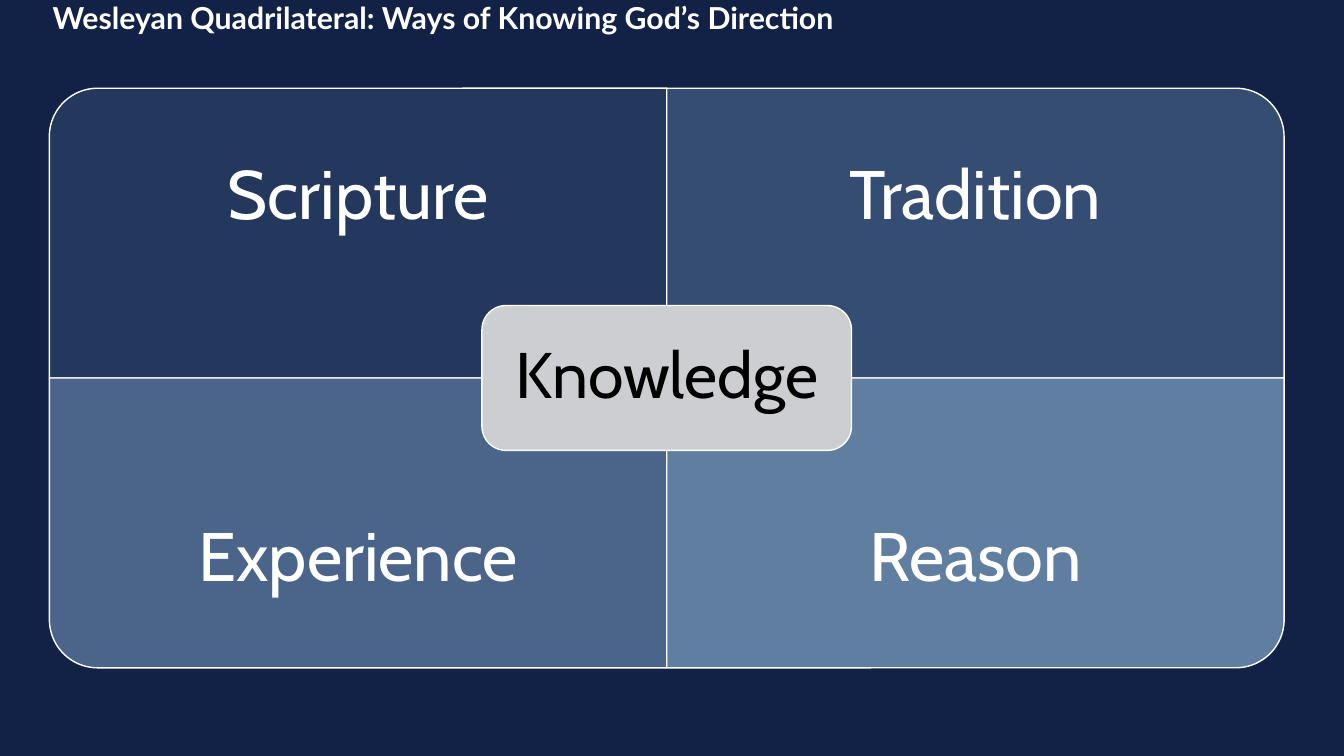
from pptx import Presentation
from pptx.dml.color import RGBColor
from pptx.enum.shapes import MSO_SHAPE
from pptx.enum.text import MSO_ANCHOR, MSO_AUTO_SIZE, PP_ALIGN
from pptx.util import Pt

SCALE = 9525
WIDE, HIGH = 588, 276
LEFT, TOP = 47, 84
LABEL = 207
PANELS = [
    ("Scripture", "24375C", 0, 0, 270),
    ("Tradition", "364D73", 1, 0, 0),
    ("Experience", "4A6589", 0, 1, 180),
    ("Reason", "5F7EA0", 1, 1, 90),
]


def px(n):
    return round(n * SCALE)


def color(code):
    return RGBColor.from_string(code)


class Board:
    white = "FFFFFF"
    face = "Cabin"

    def __init__(self, deck, back):
        self.slide = deck.slides.add_slide(deck.slide_layouts[5])
        fill = self.slide.background.fill
        fill.solid()
        fill.fore_color.rgb = color(back)

    def words(self, frame, text, size, ink, face, align, bold=False):
        frame.word_wrap = True
        frame.auto_size = MSO_AUTO_SIZE.NONE
        frame.vertical_anchor = MSO_ANCHOR.MIDDLE
        para = frame.paragraphs[0]
        para.text = text
        para.alignment = align
        para.line_spacing = 0.9
        font = para.font
        font.name, font.size, font.bold = face, Pt(size), bold
        font.color.rgb = color(ink)

    def pad(self, frame, side, edge):
        frame.margin_left = frame.margin_right = px(side)
        frame.margin_top = frame.margin_bottom = px(edge)

    def title(self, text, x, y, w, h):
        box = self.slide.shapes.title
        box.left, box.top, box.width, box.height = map(px, (x, y, w, h))
        self.pad(box.text_frame, 10, 5)
        self.words(box.text_frame, text, 21.6, self.white, "Lato", PP_ALIGN.LEFT, True)

    def shape(self, kind, x, y, w, h, fill, turn=0):
        if turn in (90, 270):
            x, y, w, h = x + (w - h) / 2, y + (h - w) / 2, h, w
        item = self.slide.shapes.add_shape(kind, *map(px, (x, y, w, h)))
        item.rotation = turn
        item.shadow.inherit = False
        item.fill.solid()
        item.fill.fore_color.rgb = color(fill)
        item.line.color.rgb = color(self.white)
        item.line.width = Pt(1)
        return item

    def label(self, text, x, y, w, h):
        frame = self.slide.shapes.add_textbox(*map(px, (x, y, w, h))).text_frame
        self.pad(frame, 36, 36)
        self.words(frame, text, 49, self.white, self.face, PP_ALIGN.CENTER)

    def hub(self, text, x, y, w, h):
        item = self.shape(MSO_SHAPE.ROUNDED_RECTANGLE, x, y, w, h, "CDCED2")
        self.pad(item.text_frame, 18, 18)
        self.words(item.text_frame, text, 46, "000000", self.face, PP_ALIGN.CENTER)


def main():
    deck = Presentation()
    deck.slide_width, deck.slide_height = px(1280), px(720)
    board = Board(deck, "122146")
    board.title("Wesleyan Quadrilateral: Ways of Knowing God’s Direction", 40, 0, 1196, 38)
    for text, fill, col, row, turn in PANELS:
        x, y = LEFT + col * WIDE, TOP + row * HIGH
        board.shape(MSO_SHAPE.ROUND_1_RECTANGLE, x, y, WIDE, HIGH, fill, turn)
        board.label(text, x, y + row * (HIGH - LABEL), WIDE, LABEL)
    board.hub("Knowledge", 459, 291, 352, 138)
    deck.save("out.pptx")


if __name__ == "__main__":
    main()
